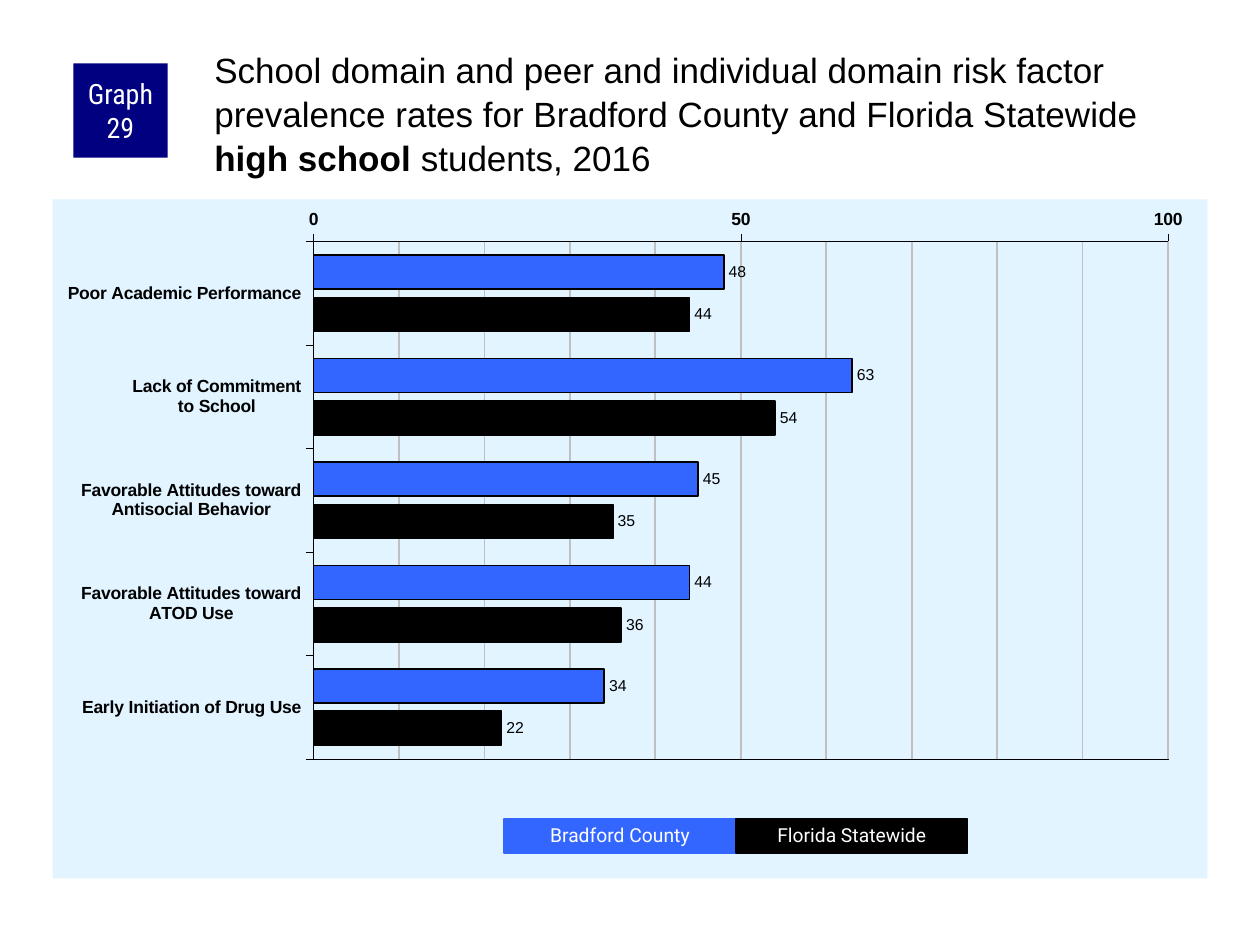
from collections import namedtuple
from copy import deepcopy

from lxml.etree import SubElement
from pptx import Presentation
from pptx.chart.data import CategoryChartData
from pptx.dml.color import RGBColor
from pptx.enum.chart import (
    XL_AXIS_CROSSES, XL_CHART_TYPE, XL_LABEL_POSITION, XL_TICK_MARK)
from pptx.enum.shapes import MSO_SHAPE
from pptx.enum.text import MSO_ANCHOR, PP_ALIGN
from pptx.oxml import parse_xml
from pptx.oxml.ns import nsdecls, qn
from pptx.util import Cm, Pt

Box = namedtuple("Box", "left top width height")

COLORS = {
    "badge": "000080",
    "panel": "E1F4FF",
    "county": "3366FF",
    "state": "000000",
    "grid": "C0C0C0",
    "text": "000000",
    "light_text": "FFFFFF",
}

CATEGORIES = [
    "Poor Academic Performance",
    "Lack of Commitment\nto School",
    "Favorable Attitudes toward\nAntisocial Behavior",
    "Favorable Attitudes toward\nATOD Use",
    "Early Initiation of Drug Use",
]
SERIES = [
    ("Bradford County", "county", (48, 63, 45, 44, 34)),
    ("Florida Statewide", "state", (44, 54, 35, 36, 22)),
]
TITLE_RUNS = [
    ("School domain and peer and individual domain risk factor prevalence "
     "rates for Bradford County and Florida Statewide ", False),
    ("high school", True),
    (" students, 2016", False),
]


def color(name):
    return RGBColor.from_string(COLORS[name])


def style_font(font, name, size, color_name, bold=False):
    font.name = name
    font.size = Pt(size)
    font.bold = bold
    font.color.rgb = color(color_name)


def style_line(line, color_name, width):
    line.color.rgb = color(color_name)
    line.width = Pt(width)


def set_margins(text_frame, left, top, right, bottom):
    text_frame.margin_left, text_frame.margin_top = Cm(left), Cm(top)
    text_frame.margin_right, text_frame.margin_bottom = Cm(right), Cm(bottom)


def add_label(slide, box, text, fill, font_name, size):
    """Add a filled rectangle with centred light text."""
    shape = slide.shapes.add_shape(
        MSO_SHAPE.RECTANGLE, *(Cm(length) for length in box))
    shape.shadow.inherit = False
    shape.fill.solid()
    shape.fill.fore_color.rgb = color(fill)
    shape.line.fill.background()
    text_frame = shape.text_frame
    text_frame.word_wrap = True
    text_frame.vertical_anchor = MSO_ANCHOR.MIDDLE
    text_frame.text = text
    paragraph = text_frame.paragraphs[0]
    paragraph.alignment = PP_ALIGN.CENTER
    style_font(paragraph.runs[0].font, font_name, size, "light_text")
    return shape


def add_header(slide, box):
    badge_size = 1.9
    badge = add_label(
        slide, Box(box.left, box.top + 0.43, badge_size, badge_size),
        "Graph 29", "badge", "Roboto Condensed", 16)
    set_margins(badge.text_frame, 0.13, 0, 0.13, 0)

    title = slide.shapes.title
    title_offset = 2.76
    title.left, title.top = Cm(box.left + title_offset), Cm(box.top)
    title.width, title.height = Cm(box.width - title_offset), Cm(box.height)
    text_frame = title.text_frame
    text_frame.word_wrap = True
    text_frame.vertical_anchor = MSO_ANCHOR.TOP
    set_margins(text_frame, 0.08, 0.08, 0, 0)
    paragraph = text_frame.paragraphs[0]
    paragraph.alignment = PP_ALIGN.LEFT
    paragraph.line_spacing = 1.05
    for text, bold in TITLE_RUNS:
        run = paragraph.add_run()
        run.text = text
        style_font(run.font, "Arial", 20, "text", bold)


def format_axes(chart):
    category_axis, value_axis = chart.category_axis, chart.value_axis
    for axis in (category_axis, value_axis):
        axis.major_tick_mark = XL_TICK_MARK.OUTSIDE
        axis.minor_tick_mark = XL_TICK_MARK.NONE
        style_font(axis.tick_labels.font, "Arial", 10, "text", True)
        style_line(axis.format.line, "text", 0.25)
    category_axis.reverse_order = True
    category_axis.crosses = XL_AXIS_CROSSES.MAXIMUM
    value_axis.minimum_scale, value_axis.maximum_scale = 0, 100
    value_axis.major_unit, value_axis.minor_unit = 50, 10
    value_axis.has_major_gridlines = value_axis.has_minor_gridlines = True
    style_line(value_axis.major_gridlines.format.line, "grid", 1)
    axis_element = value_axis._element
    line_format = axis_element.find(qn("c:majorGridlines"))[0]
    axis_element.find(qn("c:minorGridlines")).append(deepcopy(line_format))


def format_areas(chart):
    """Fix the inner plot position, frame the plot and fill the panel."""
    plot_area = chart._chartSpace.chart.plotArea
    for old_layout in plot_area.findall(qn("c:layout")):
        plot_area.remove(old_layout)
    layout = parse_xml(f"<c:layout {nsdecls('c')}><c:manualLayout/></c:layout>")
    settings = {"layoutTarget": "inner", "xMode": "edge", "yMode": "edge",
                "x": 0.226, "y": 0.062, "w": 0.74, "h": 0.762}
    for tag, value in settings.items():
        SubElement(layout[0], qn(f"c:{tag}"), val=str(value))
    plot_area.insert(0, layout)
    plot_area.append(parse_xml(
        f'<c:spPr {nsdecls("c", "a")}><a:noFill/><a:ln w="3175"><a:solidFill>'
        f'<a:srgbClr val="{COLORS["text"]}"/></a:solidFill></a:ln></c:spPr>'))
    chart._chartSpace.chart.addnext(parse_xml(
        f'<c:spPr {nsdecls("c", "a")}><a:solidFill>'
        f'<a:srgbClr val="{COLORS["panel"]}"/></a:solidFill>'
        '<a:ln><a:noFill/></a:ln></c:spPr>'))


def add_risk_chart(slide, box):
    data = CategoryChartData()
    data.categories = CATEGORIES
    for name, _, values in SERIES:
        data.add_series(name, values)
    chart = slide.shapes.add_chart(
        XL_CHART_TYPE.BAR_CLUSTERED,
        *(Cm(length) for length in box), data).chart
    chart.has_title = chart.has_legend = False
    style_font(chart.font, "Arial", 11.8, "text")
    plot = chart.plots[0]
    plot.gap_width, plot.overlap = 80, -25
    plot.vary_by_categories = False
    for series, (_, fill, _) in zip(plot.series, SERIES):
        series.format.fill.solid()
        series.format.fill.fore_color.rgb = color(fill)
        style_line(series.format.line, "text", 1)
        labels = series.data_labels
        labels.show_value = True
        labels.position = XL_LABEL_POSITION.OUTSIDE_END
        style_font(labels.font, "Arial", 9, "text")
    format_axes(chart)
    format_areas(chart)


def add_legend(slide, box):
    width = box.width / len(SERIES)
    for index, (name, fill, _) in enumerate(SERIES):
        key_box = box._replace(left=box.left + index * width, width=width)
        key = add_label(slide, key_box, name, fill, "Roboto", 11)
        style_line(key.line, fill, 0.75)
        key.text_frame.paragraphs[0].line_spacing = 0.9


def main():
    presentation = Presentation()
    presentation.slide_width, presentation.slide_height = Cm(25.4), Cm(19.05)
    slide = presentation.slides.add_slide(presentation.slide_layouts[5])
    add_risk_chart(slide, Box(1.06, 4.02, 23.28, 13.69))
    add_header(slide, Box(1.48, 0.85, 22.87, 2.12))
    add_legend(slide, Box(10.16, 16.51, 9.35, 0.69))
    presentation.save("out.pptx")


if __name__ == "__main__":
    main()
